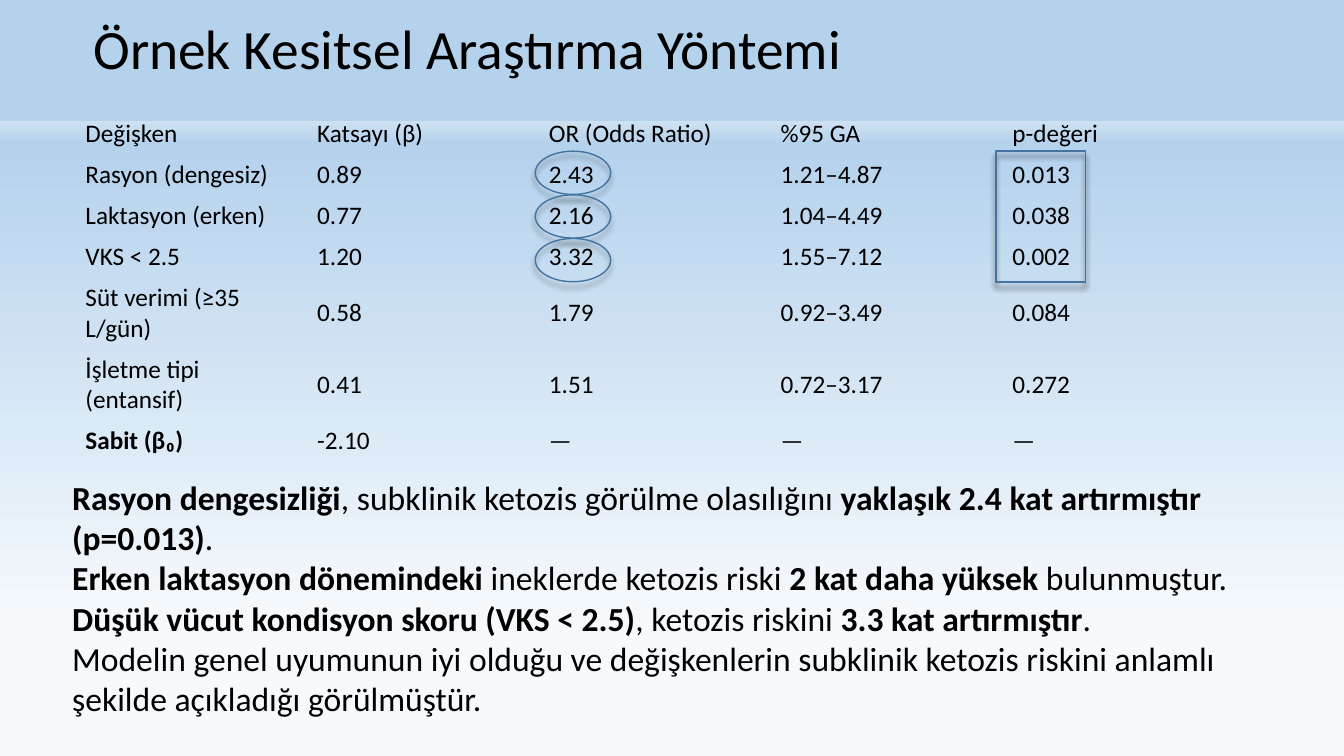
import lxml.etree
import pptx
import pptx.dml.color
import pptx.enum.shapes
import pptx.enum.text
import pptx.oxml.ns
import pptx.util

Cm = pptx.util.Cm
RGBColor = pptx.dml.color.RGBColor
MSO_SHAPE = pptx.enum.shapes.MSO_SHAPE
qn = pptx.oxml.ns.qn

BLACK = RGBColor(0x00, 0x00, 0x00)
OUTLINE = RGBColor(0x43, 0x73, 0x9E)
SKY = RGBColor(0xB5, 0xD2, 0xEC)
PALE_SKY = RGBColor(0xCE, 0xE1, 0xF2)
NEAR_WHITE = RGBColor(0xF7, 0xFA, 0xFD)
BACKGROUND_STOPS = [(16, SKY), (16, PALE_SKY), (19, SKY), (84, NEAR_WHITE)]

FONT = "Calibri"
NO_GRID_STYLE = "{2D5ABB26-0587-4C30-8999-92F81FD0307C}"
LINE_HEIGHT, WRAPPED_HEIGHT = 1.03, 1.8

REGRESSION_ROWS = [
    ("Değişken", "Katsayı (β)", "OR (Odds Ratio)", "%95 GA", "p-değeri"),
    ("Rasyon (dengesiz)", "0.89", "2.43", "1.21–4.87", "0.013"),
    ("Laktasyon (erken)", "0.77", "2.16", "1.04–4.49", "0.038"),
    ("VKS < 2.5", "1.20", "3.32", "1.55–7.12", "0.002"),
    ("Süt verimi (≥35 L/gün)", "0.58", "1.79", "0.92–3.49", "0.084"),
    ("İşletme tipi (entansif)", "0.41", "1.51", "0.72–3.17", "0.272"),
    ("Sabit (β₀)", "-2.10", "—", "—", "—"),
]
WRAPPED_ROWS = (4, 5)

# Each finding is a list of (text, bold) runs.
FINDINGS = [
    [("Rasyon dengesizliği", True),
     (", subklinik ketozis görülme olasılığını ", False),
     ("yaklaşık 2.4 kat artırmıştır (p=0.013)", True), (".", False)],
    [("Erken laktasyon dönemindeki", True),
     (" ineklerde ketozis riski ", False),
     ("2 kat daha yüksek", True), (" bulunmuştur.", False)],
    [("Düşük vücut kondisyon skoru (VKS < 2.5)", True),
     (", ketozis riskini ", False),
     ("3.3 kat artırmıştır", True), (".", False)],
    [("Modelin genel uyumunun iyi olduğu ve değişkenlerin subklinik ketozis "
      "riskini anlamlı şekilde açıkladığı görülmüştür.", False)],
]


def add_run(paragraph, text, size, bold=False):
    run = paragraph.add_run()
    run.text = text
    run.font.name = FONT
    run.font.size = pptx.util.Pt(size)
    run.font.bold = bold
    run.font.color.rgb = BLACK


def add_color(parent, color):
    return lxml.etree.SubElement(parent, qn("a:srgbClr"), val=str(color))


def paint_background(slide):
    fill = slide.background.fill
    fill.gradient()
    fill.gradient_angle = 270
    stop_list = next(slide.background._cSld.iter(qn("a:gsLst")))
    for stop in list(stop_list):
        stop_list.remove(stop)
    for percent, color in BACKGROUND_STOPS:
        stop = lxml.etree.SubElement(stop_list, qn("a:gs"), pos=str(percent * 1000))
        add_color(stop, color)


def place_title(slide, left, top, width, height):
    title = slide.shapes.title
    title.left, title.top, title.width, title.height = map(Cm, (left, top, width, height))
    frame = title.text_frame
    frame.auto_size = pptx.enum.text.MSO_AUTO_SIZE.NONE
    frame.vertical_anchor = pptx.enum.text.MSO_ANCHOR.MIDDLE
    paragraph = frame.paragraphs[0]
    paragraph.alignment = pptx.enum.text.PP_ALIGN.LEFT
    paragraph.line_spacing = 0.9
    add_run(paragraph, "Örnek Kesitsel Araştırma Yöntemi", 39.6)


def add_regression_table(slide, left, top, width):
    heights = [WRAPPED_HEIGHT if index in WRAPPED_ROWS else LINE_HEIGHT
               for index in range(len(REGRESSION_ROWS))]
    column_count = len(REGRESSION_ROWS[0])
    frame = slide.shapes.add_table(len(heights), column_count, Cm(left), Cm(top),
                                   Cm(width), Cm(sum(heights)))
    table = frame.table
    table.first_row = table.horz_banding = False
    next(table._tbl.iter(qn("a:tableStyleId"))).text = NO_GRID_STYLE
    for column in table.columns:
        column.width = Cm(width / column_count)
    for row, height, texts in zip(table.rows, heights, REGRESSION_ROWS):
        row.height = Cm(height)
        for cell, text in zip(row.cells, texts):
            cell.fill.background()
            cell.vertical_anchor = pptx.enum.text.MSO_ANCHOR.MIDDLE
            add_run(cell.text_frame.paragraphs[0], text, 18, text.startswith("Sabit"))


def add_findings(slide, left, top, width, height):
    frame = slide.shapes.add_textbox(Cm(left), Cm(top), Cm(width), Cm(height)).text_frame
    frame.word_wrap = True
    frame.margin_top = Cm(1.16)
    for index, runs in enumerate(FINDINGS):
        paragraph = frame.add_paragraph() if index else frame.paragraphs[0]
        for text, bold in runs:
            add_run(paragraph, text, 24, bold)


def add_marker(slide, preset, left, top, width, height, shadow_opacity):
    """Outline a table value with an unfilled shape that casts a shadow downwards."""
    marker = slide.shapes.add_shape(preset, Cm(left), Cm(top), Cm(width), Cm(height))
    marker.fill.background()
    marker.line.color.rgb = OUTLINE
    marker.line.width = pptx.util.Pt(1)
    marker.shadow.inherit = False
    effects = marker._element.spPr.find(qn("a:effectLst"))
    distance = str(pptx.util.Pt(4))
    shadow = lxml.etree.SubElement(effects, qn("a:outerShdw"), blurRad=distance,
                                   dist=distance, dir="5400000", rotWithShape="0")
    color = add_color(shadow, BLACK)
    lxml.etree.SubElement(color, qn("a:alpha"), val=str(shadow_opacity * 1000))


def add_significance_markers(slide, left, top):
    """Circle the three significant odds ratios and frame their p-values."""
    pitch = 1.1
    for index in range(3):
        add_marker(slide, MSO_SHAPE.OVAL, left, top + index * pitch, 1.9, 1.09, 43)
    add_marker(slide, MSO_SHAPE.RECTANGLE, left + 11.61, top, 2.26, 3 * pitch, 72)


def main():
    presentation = pptx.Presentation()
    presentation.slide_width = Cm(33.87)
    presentation.slide_height = Cm(19.05)
    slide = presentation.slides.add_slide(presentation.slide_layouts[5])
    paint_background(slide)
    place_title(slide, 2.1, 0.53, 29.2, 1.52)
    add_regression_table(slide, 1.9, 2.87, 29.2)
    add_findings(slide, 1.57, 10.85, 31.1, 8.2)
    add_significance_markers(slide, 13.49, 3.81)
    presentation.save("out.pptx")


if __name__ == "__main__":
    main()
